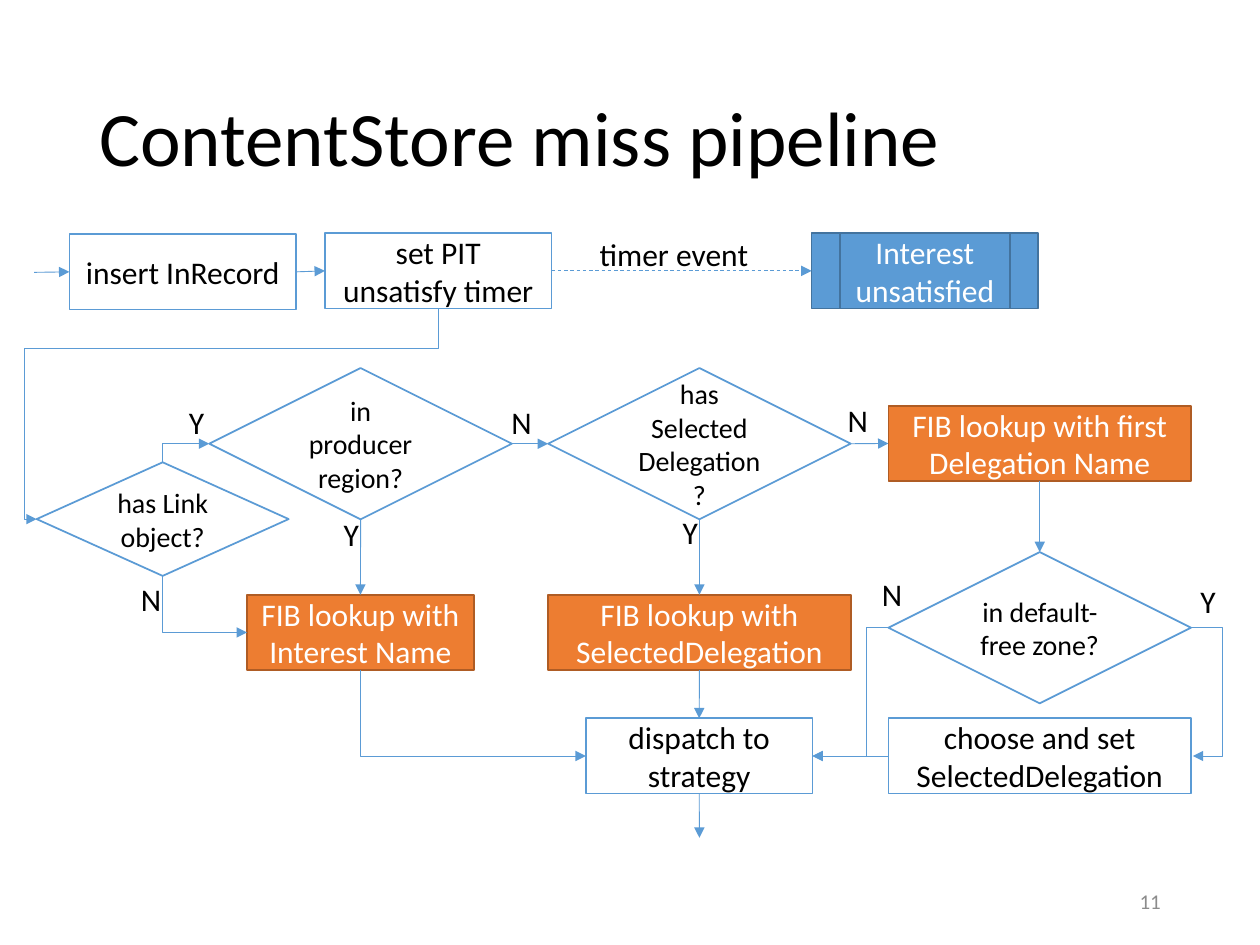
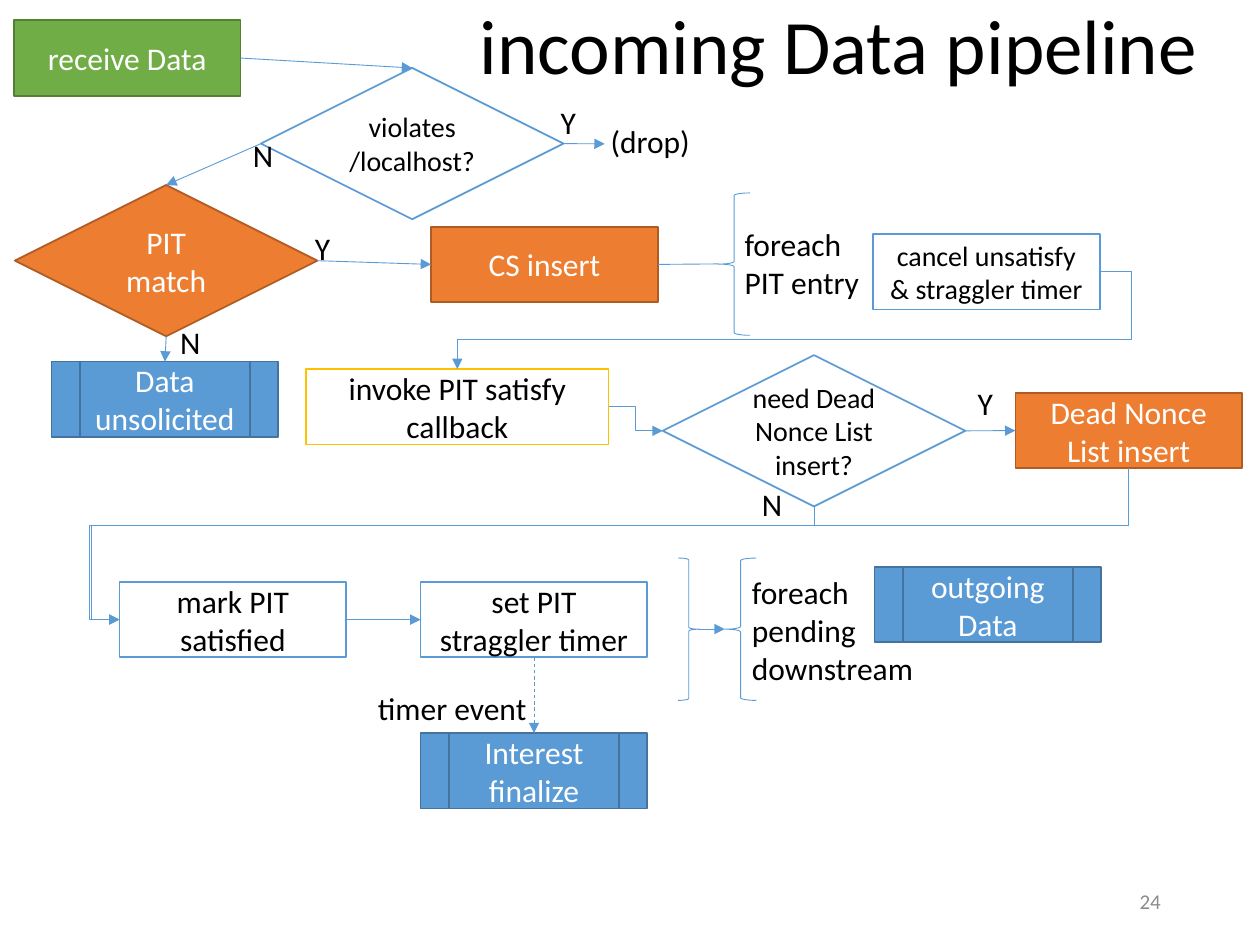
"""Build two flowchart slides: the ContentStore miss and incoming Data pipelines."""
from lxml import etree
from pptx import Presentation
from pptx import util as u
from pptx.dml.color import RGBColor
from pptx.enum import dml, shapes, text
from pptx.oxml.ns import qn

RECT = shapes.MSO_SHAPE.RECTANGLE
DECISION = shapes.MSO_SHAPE.FLOWCHART_DECISION
PROCESS = shapes.MSO_SHAPE.FLOWCHART_PREDEFINED_PROCESS
LEFT_BRACE = shapes.MSO_SHAPE.LEFT_BRACE
RIGHT_BRACE = shapes.MSO_SHAPE.RIGHT_BRACE
LEFT, CENTER, RIGHT = text.PP_ALIGN.LEFT, text.PP_ALIGN.CENTER, text.PP_ALIGN.RIGHT
TOP, BOTTOM, WEST, EAST = 0, 2, 1, 3

THEME = {
    "font": "Calibri", "title": 44, "body": 18, "small": 16, "number": 12,
    "black": "000000", "white": "FFFFFF", "grey": "8C8C8C",
    "blue": "5B9BD5", "dark_blue": "43739E", "orange": "ED7D31", "dark_orange": "AF5C24",
    "green": "70AD47", "dark_green": "538035", "yellow": "FFC000",
}
STYLES = {
    "step": (RECT, "white", "blue", "black", "body", 4.57, 1.52),
    "small step": (RECT, "white", "blue", "black", "small", 4.57, 1.52),
    "wide step": (RECT, "white", "blue", "black", "body", 6.1, 1.52),
    "callback": (RECT, "white", "yellow", "black", "body", 6.1, 1.52),
    "table": (RECT, "orange", "dark_orange", "white", "body", 4.57, 1.52),
    "wide table": (RECT, "orange", "dark_orange", "white", "body", 6.1, 1.52),
    "entry": (RECT, "green", "dark_green", "white", "body", 4.57, 1.52),
    "pipeline": (PROCESS, "blue", "dark_blue", "white", "body", 4.57, 1.52),
    "decision": (DECISION, "white", "blue", "black", "small", 6.1, 3.05),
    "small decision": (DECISION, "white", "blue", "black", "small", 5.08, 2.29),
    "table decision": (DECISION, "orange", "dark_orange", "white", "body", 6.1, 3.05),
}
LABEL_SIZES = {
    "Y": (0.81, 1.02), "N": (0.91, 1.02), "timer event": (3.56, 1.02), "(drop)": (2.13, 1.02),
    "foreach\nPIT entry": (2.84, 1.8), "foreach\npending\ndownstream": (3.78, 2.57),
}
SLIDES = [
    {
        "title": ("ContentStore miss pipeline", 1.75, 1.02, 21.89, 3.68),
        "number": "11",
        "boxes": {
            "insert": ("step", 1.4, 4.72, "insert InRecord"),
            "timer": ("step", 6.55, 4.7, "set PIT unsatisfy timer"),
            "unsatisfied": ("pipeline", 16.36, 4.7, "Interest unsatisfied"),
            "link": ("small decision", 0.74, 9.32, "has Link object?"),
            "region": ("decision", 4.22, 7.42, "in producer region?"),
            "selected": ("decision", 11.05, 7.42, "has Selected\nDelegation?"),
            "zone": ("decision", 17.91, 11.13, "in default-free zone?"),
            "fib interest": ("table", 4.98, 11.99, "FIB lookup with Interest Name"),
            "fib selected": ("wide table", 11.05, 11.99, "FIB lookup with SelectedDelegation"),
            "fib first": ("wide table", 17.91, 8.18, "FIB lookup with first Delegation Name"),
            "dispatch": ("step", 11.81, 14.48, "dispatch to strategy"),
            "choose": ("wide step", 17.91, 14.48, "choose and set SelectedDelegation"),
        },
        "braces": [],
        "links": [
            ((0.69, 5.49), ("insert", WEST), {}),
            (("insert", EAST), ("timer", WEST), {}),
            (("timer", EAST), ("unsatisfied", WEST), {"dash": True}),
            (("region", EAST), ("selected", WEST), {}),
            (("region", BOTTOM), ("fib interest", TOP), {}),
            (("selected", EAST), ("fib first", WEST), {}),
            (("selected", BOTTOM), ("fib selected", TOP), {}),
            (("fib first", BOTTOM), ("zone", TOP), {}),
            (("fib selected", BOTTOM), ("dispatch", TOP), {}),
            (("choose", WEST), ("dispatch", EAST), {}),
            (("dispatch", BOTTOM), (14.1, 16.89), {}),
            (("timer", BOTTOM), ("link", WEST), {"bends": (0.19, 1.03)}),
            (("link", TOP), ("region", WEST), {"bends": ()}),
            (("link", BOTTOM), ("fib interest", WEST), {"bends": ()}),
            (("fib interest", BOTTOM), ("dispatch", WEST), {"bends": ()}),
            (("zone", WEST), ("dispatch", EAST), {"bends": (0.29,)}),
            (("zone", EAST), ("choose", EAST), {"bends": (18,)}),
        ],
        "labels": [
            ("timer event", 11.84, 4.62), ("Y", 3.56, 8), ("N", 2.59, 11.56),
            ("Y", 6.68, 10.26), ("N", 10.06, 8), ("Y", 13.51, 10.21),
            ("N", 16.84, 7.95), ("N", 17.53, 11.46), ("Y", 23.95, 11.61),
        ],
    },
    {
        "title": ("incoming Data pipeline", 9.42, -0.18, 15.62, 2.34),
        "number": "24",
        "boxes": {
            "receive": ("entry", 0.28, 0.41, "receive Data"),
            "violates": ("decision", 5.26, 1.37, "violates /localhost?"),
            "match": ("table decision", 0.3, 3.73, "PIT match"),
            "unsolicited": ("pipeline", 1.04, 7.29, "Data unsolicited"),
            "cs insert": ("table", 8.69, 4.57, "CS insert"),
            "cancel": ("small step", 17.6, 4.72, "cancel unsatisfy & straggler timer"),
            "invoke": ("callback", 6.17, 7.44, "invoke PIT satisfy callback"),
            "need nonce": ("decision", 13.36, 7.16, "need Dead Nonce List insert?"),
            "nonce insert": ("table", 20.47, 7.92, "Dead Nonce List insert"),
            "mark": ("step", 2.41, 11.73, "mark PIT satisfied"),
            "straggler": ("step", 8.48, 11.73, "set PIT straggler timer"),
            "finalize": ("pipeline", 8.48, 14.78, "Interest finalize"),
            "outgoing": ("pipeline", 17.63, 11.43, "outgoing Data"),
        },
        "braces": [
            (LEFT_BRACE, 14.48, 3.89, 0.64), (RIGHT_BRACE, 13.67, 11.25, 0.43),
            (LEFT_BRACE, 14.61, 11.25, 0.64),
        ],
        "links": [
            (("receive", EAST), ("violates", TOP), {}),
            (("violates", EAST), (12.19, 2.9), {}),
            (("violates", WEST), ("match", TOP), {}),
            (("match", BOTTOM), ("unsolicited", TOP), {}),
            (("match", EAST), ("cs insert", WEST), {}),
            (("cs insert", EAST), (14.48, 5.32), {"plain": True}),
            (("need nonce", EAST), ("nonce insert", WEST), {}),
            (("mark", EAST), ("straggler", WEST), {}),
            (("straggler", BOTTOM), ("finalize", TOP), {"dash": True}),
            ((14.07, 12.68), (14.61, 12.68), {}),
            (("cancel", EAST), ("invoke", TOP), {"bends": (-0.05, 0.7)}),
            (("invoke", EAST), ("need nonce", WEST), {"bends": (0.5,)}),
            (("need nonce", BOTTOM), ("mark", WEST), {"bends": (0.17, 1.04)}),
            (("nonce insert", BOTTOM), ("mark", WEST), {"bends": (0.38, 1.03)}),
        ],
        "labels": [
            ("Y", 11.05, 1.96), ("(drop)", 12.06, 2.34), ("N", 4.85, 2.62), ("Y", 6.1, 4.5),
            ("N", 3.38, 6.38), ("foreach\nPIT entry", 14.76, 4.42), ("Y", 19.46, 7.62),
            ("N", 15.11, 9.65), ("foreach\npending\ndownstream", 14.91, 11.43),
            ("timer event", 7.37, 13.77),
        ],
    },
]


def color(name):
    return RGBColor.from_string(THEME[name])


def write(sp, words, size, ink, align, anchor=text.MSO_ANCHOR.MIDDLE, wrap=True, spacing=1.0):
    tf = sp.text_frame
    tf.text = words
    tf.word_wrap, tf.vertical_anchor = wrap, anchor
    for p in tf.paragraphs:
        p.alignment, p.line_spacing = align, spacing
        for r in p.runs:
            for key, value in {"name": THEME["font"], "size": u.Pt(THEME[size])}.items():
                setattr(r.font, key, value)
            r.font.color.rgb = color(ink)


prs = Presentation()
prs.slide_width, prs.slide_height = u.Cm(25.4), u.Cm(19.05)

for page in SLIDES:
    s = prs.slides.add_slide(prs.slide_layouts[6])
    words, *frame = page["title"]
    write(s.shapes.add_textbox(*map(u.Cm, frame)), words, "title", "black", LEFT, spacing=0.9)
    number = s.shapes.add_textbox(*map(u.Cm, (17.93, 17.65, 5.72, 1.02)))
    write(number, page["number"], "number", "grey", RIGHT)

    boxes = {}
    for name, (style, x, y, words) in page["boxes"].items():
        kind, fill, edge, ink, size, w, h = STYLES[style]
        sp = boxes[name] = s.shapes.add_shape(kind, *map(u.Cm, (x, y, w, h)))
        sp.shadow.inherit = False
        sp.fill.solid()
        sp.fill.fore_color.rgb = color(fill)
        sp.line.color.rgb, sp.line.width = color(edge), u.Pt(1)
        write(sp, words, size, ink, CENTER)

    for kind, x, y, w in page["braces"]:
        sp = s.shapes.add_shape(kind, *map(u.Cm, (x, y, w, 2.87)))
        sp.shadow.inherit = False
        sp.fill.background()
        sp.line.color.rgb, sp.line.width = color("blue"), u.Pt(0.5)

    for start, end, look in page["links"]:
        bends = look.get("bends")
        kind = shapes.MSO_CONNECTOR.STRAIGHT if bends is None else shapes.MSO_CONNECTOR.ELBOW
        ends = [(0, 0) if pt[0] in boxes else pt for pt in (start, end)]
        c = s.shapes.add_connector(kind, *(u.Cm(v) for pt in ends for v in pt))
        for pt, join in ((start, c.begin_connect), (end, c.end_connect)):
            if pt[0] in boxes:
                join(boxes[pt[0]], pt[1])
        c.line.color.rgb, c.line.width = color("blue"), u.Pt(0.5)
        if look.get("dash"):
            c.line.dash_style = dml.MSO_LINE.DASH
        if not look.get("plain"):
            etree.SubElement(c.line._get_or_add_ln(), qn("a:tailEnd"), type="triangle")
        pr = c._element.spPr
        etree.SubElement(pr, qn("a:effectLst"))
        if bends is None:
            continue

        x1, y1, x2, y2 = c.begin_x, c.begin_y, c.end_x, c.end_y
        dx, dy = x2 - x1, y2 - y1
        upright = start[1] in (TOP, BOTTOM)
        w, h = (abs(dy), abs(dx)) if upright else (max(abs(dx), u.Pt(1)), abs(dy))
        flips = (dy < 0, dx > 0) if upright else (dx < 0, dy < 0)
        if upright:
            frame = ((x1 + x2 - w) // 2, (y1 + y2 - h) // 2, w, h)
        else:
            frame = (min(x1, x2), min(y1, y2), w, h)
        for key, value in zip(("left", "top", "width", "height"), frame):
            setattr(c, key, value)
        turn = {"rot": 5400000 * upright, "flipH": int(flips[0]), "flipV": int(flips[1])}
        for key, value in turn.items():
            pr.find(qn("a:xfrm")).set(key, str(value))
        geom = pr.find(qn("a:prstGeom"))
        geom.set("prst", f"bentConnector{len(bends) + 2}")
        for i, bend in enumerate(bends, 1):
            etree.SubElement(geom.find(qn("a:avLst")), qn("a:gd"),
                             name=f"adj{i}", fmla=f"val {round(bend * 100000)}")

    for words, x, y in page["labels"]:
        sp = s.shapes.add_textbox(*map(u.Cm, (x, y, *LABEL_SIZES[words])))
        write(sp, words, "body", "black", LEFT, text.MSO_ANCHOR.TOP, wrap=False)

prs.save("out.pptx")
